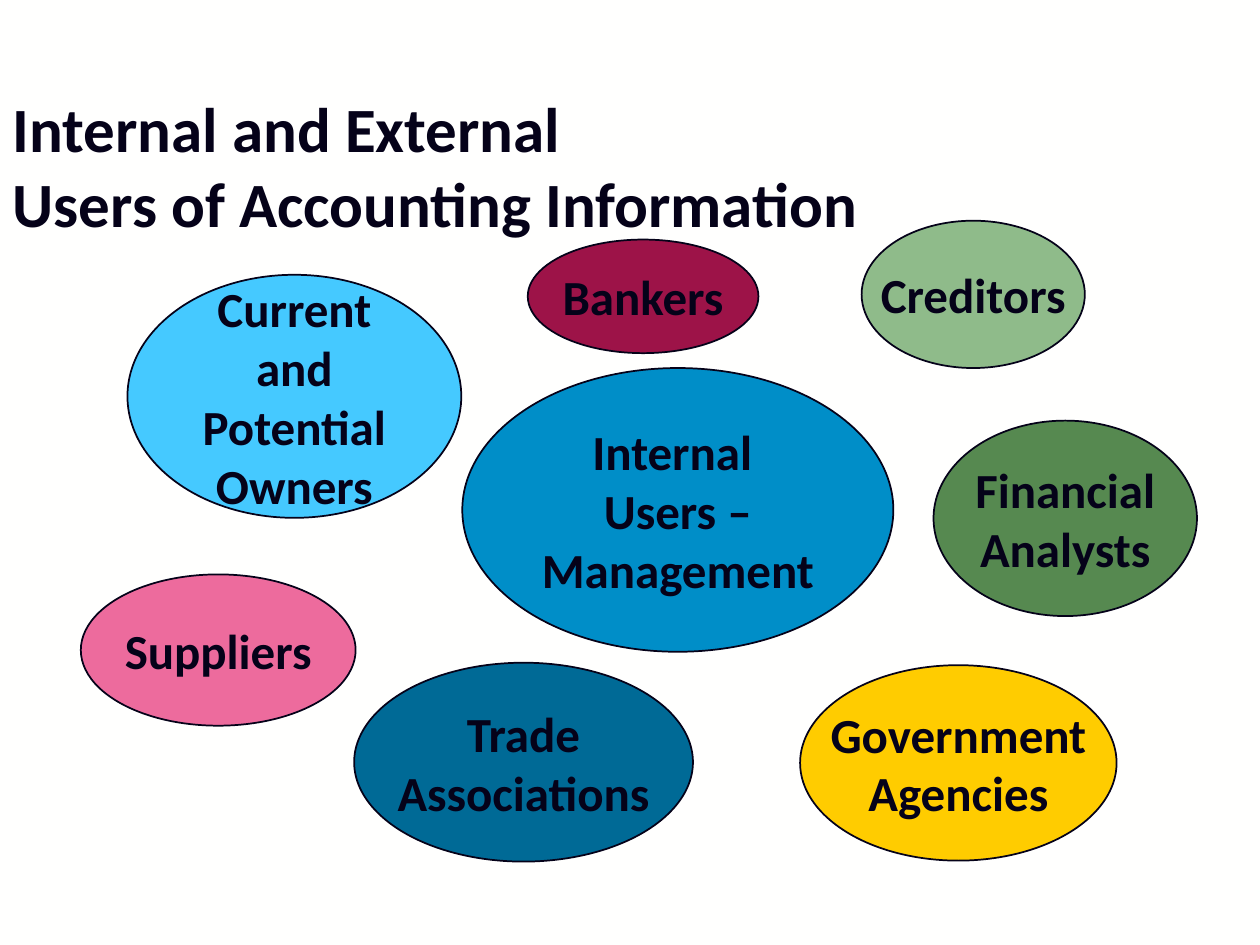
from pptx import Presentation
from pptx.dml.color import RGBColor
from pptx.enum.shapes import MSO_SHAPE
from pptx.enum.text import MSO_ANCHOR, MSO_AUTO_SIZE, PP_ALIGN
from pptx.util import Cm, Pt

OVAL = MSO_SHAPE.OVAL
MIDDLE = MSO_ANCHOR.MIDDLE
NO_AUTOFIT = MSO_AUTO_SIZE.NONE
LEFT, CENTER = PP_ALIGN.LEFT, PP_ALIGN.CENTER
TITLE_ONLY = 5

INK = "050219"
BACKGROUND = "FFFFFE"
FONT = "Calibri"

TITLE_LINES = ["Internal and External", "Users of Accounting Information"]

# Lines of text, fill, and left, top, width, height in centimetres
USER_GROUPS = [
    (["Internal ", "Users –", "Management"], "008EC8", (9.32, 7.42, 8.69, 5.72)),
    (["Creditors"], "8FBB8A", (17.37, 4.45, 4.5, 2.97)),
    (["Current", "and", "Potential", "Owners"], "45C9FF", (2.57, 5.54, 6.73, 4.9)),
    (["Government", "Agencies"], "FFCC00", (16.13, 13.41, 6.38, 3.94)),
    (["Suppliers"], "ED6B9D", (1.63, 11.58, 5.54, 3.05)),
    (["Trade", "Associations"], "006A96", (7.14, 13.36, 6.83, 4.01)),
    (["Financial", "Analysts"], "568950", (18.82, 8.48, 5.31, 3.94)),
    (["Bankers"], "9D1348", (10.64, 4.83, 4.65, 2.29)),
]


def color(hex_value):
    return RGBColor.from_string(hex_value)


def add_run(paragraph, text, size):
    run = paragraph.add_run()
    run.text = text
    run.font.name = FONT
    run.font.size = Pt(size)
    run.font.bold = True
    run.font.color.rgb = color(INK)


def set_frame(text_frame, wrap):
    text_frame.auto_size = NO_AUTOFIT
    text_frame.word_wrap = wrap
    text_frame.vertical_anchor = MIDDLE


def format_title(title):
    title.left, title.top = Cm(0), Cm(1.7)
    title.width, title.height = Cm(25.4), Cm(3.25)
    set_frame(title.text_frame, True)
    paragraph = title.text_frame.paragraphs[0]
    paragraph.alignment = LEFT
    for index, line in enumerate(TITLE_LINES):
        if index:
            paragraph.add_line_break()
        add_run(paragraph, line, 36)


def add_user_group(slide, lines, fill, box):
    shape = slide.shapes.add_shape(OVAL, *map(Cm, box))
    shape.shadow.inherit = False
    shape.fill.solid()
    shape.fill.fore_color.rgb = color(fill)
    shape.line.color.rgb = color(INK)
    shape.line.width = Pt(1)
    text_frame = shape.text_frame
    set_frame(text_frame, False)
    for index, line in enumerate(lines):
        paragraph = text_frame.add_paragraph() if index else text_frame.paragraphs[0]
        paragraph.alignment = CENTER
        add_run(paragraph, line, 28)


def main():
    presentation = Presentation()
    presentation.slide_width, presentation.slide_height = Cm(25.4), Cm(19.05)
    slide = presentation.slides.add_slide(presentation.slide_layouts[TITLE_ONLY])
    slide.background.fill.solid()
    slide.background.fill.fore_color.rgb = color(BACKGROUND)

    # Heading
    format_title(slide.shapes.title)

    # Internal users in the middle, external users around them
    for lines, fill, box in USER_GROUPS:
        add_user_group(slide, lines, fill, box)

    presentation.save("out.pptx")


if __name__ == "__main__":
    main()
